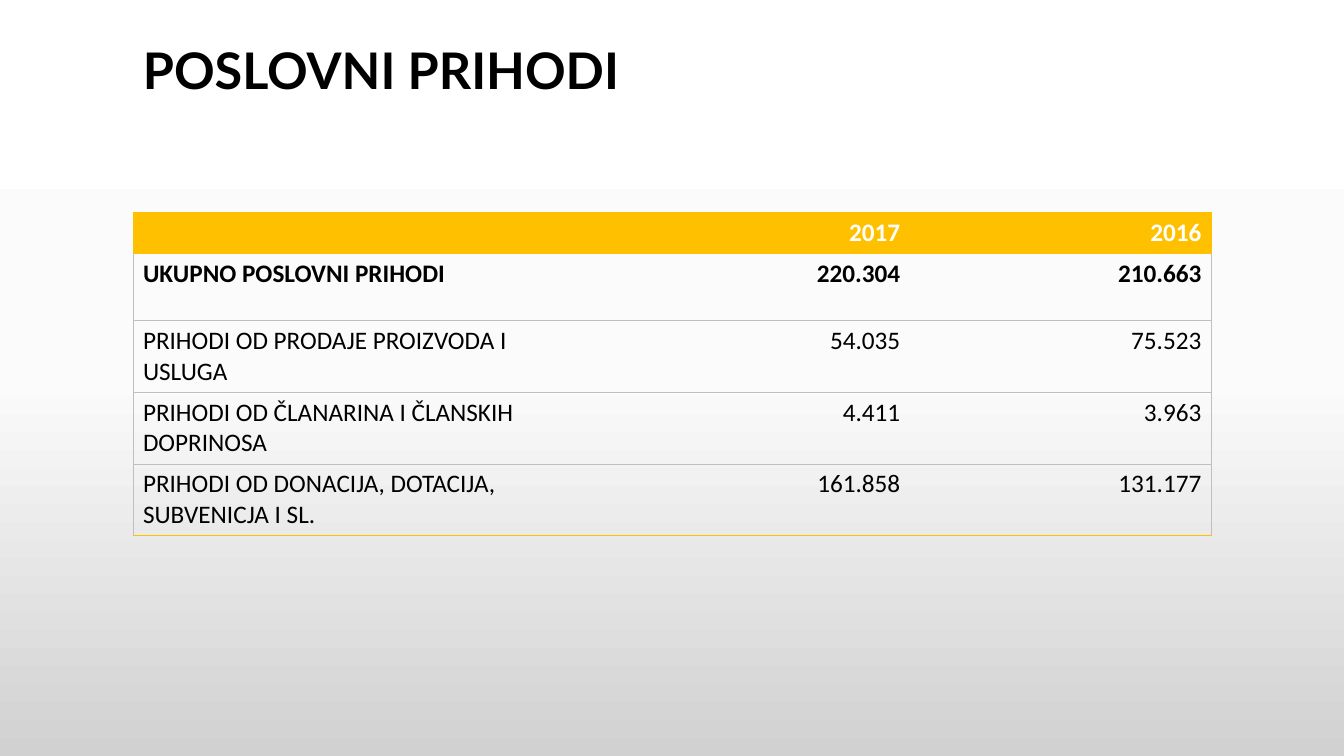
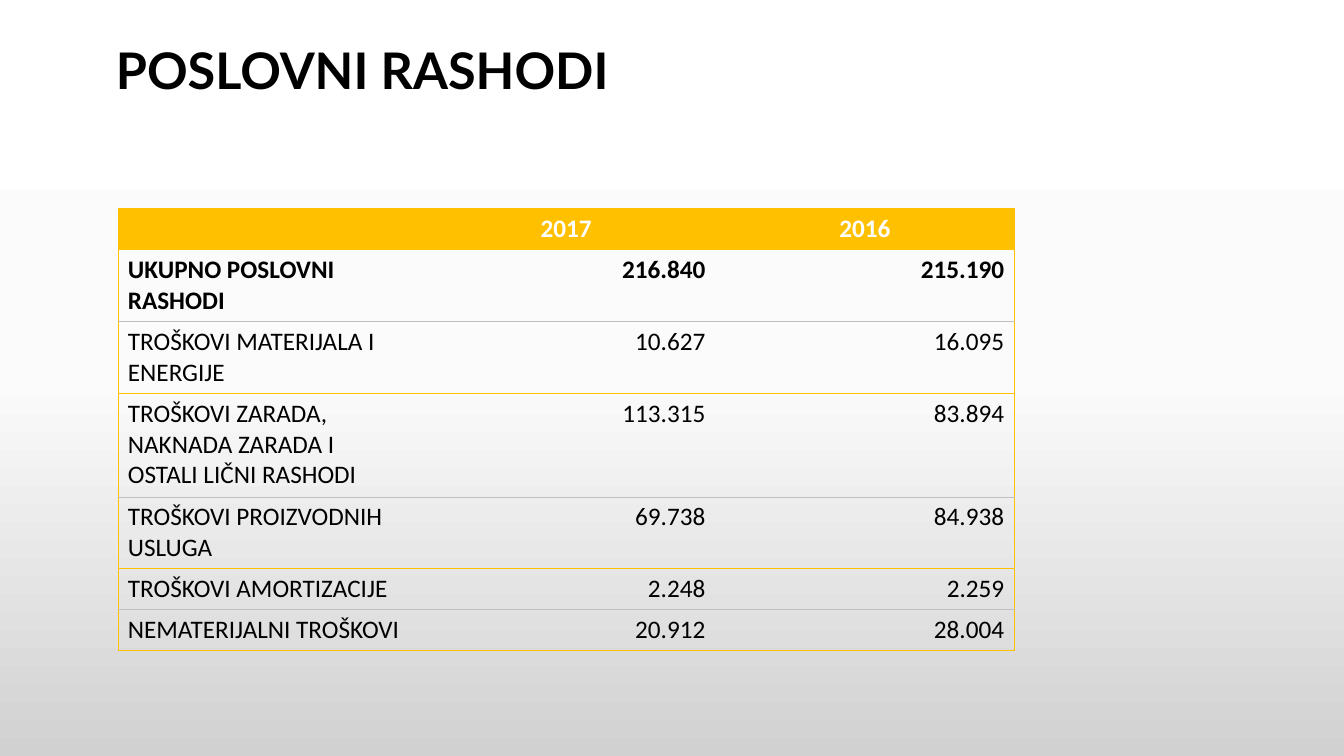
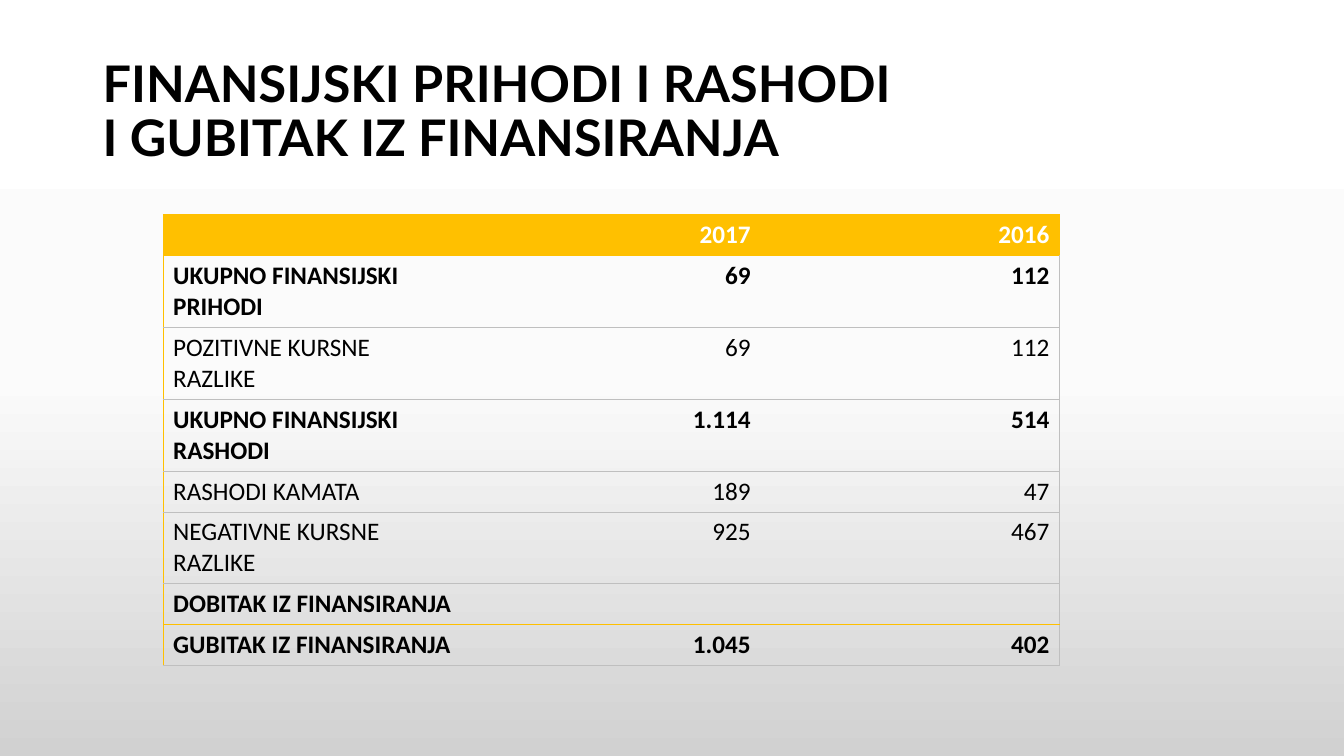
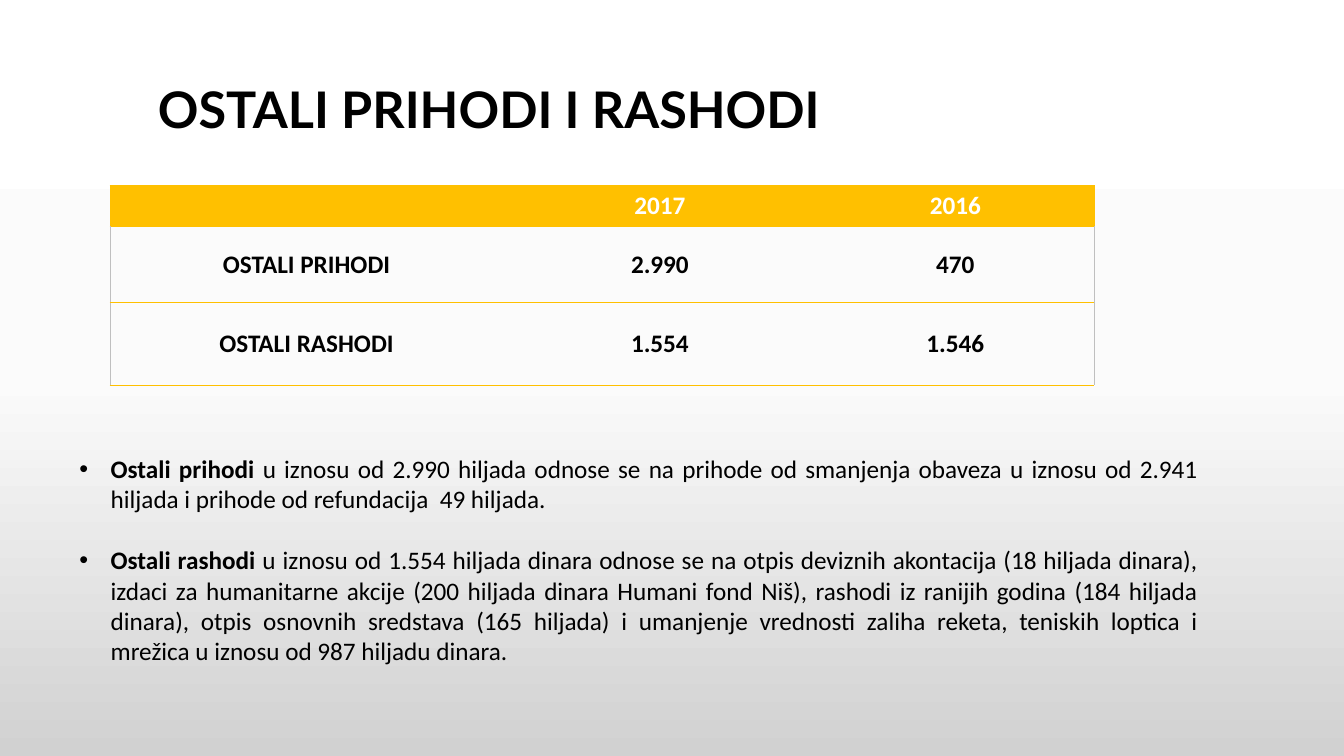
from copy import deepcopy
from dataclasses import dataclass

from pptx import Presentation
from pptx.dml.color import RGBColor
from pptx.enum.text import MSO_ANCHOR, PP_ALIGN
from pptx.oxml import parse_xml
from pptx.oxml.ns import nsdecls, qn
from pptx.util import Cm, Pt

LEFT, CENTER, RIGHT = PP_ALIGN.LEFT, PP_ALIGN.CENTER, PP_ALIGN.RIGHT
JUSTIFY = PP_ALIGN.JUSTIFY
TOP, MIDDLE = MSO_ANCHOR.TOP, MSO_ANCHOR.MIDDLE

BLACK = RGBColor(0x00, 0x00, 0x00)
WHITE = RGBColor(0xFF, 0xFF, 0xFF)
AMBER = RGBColor(0xFF, 0xC0, 0x00)
GRAY = RGBColor(0xBF, 0xBF, 0xBF)
BACKGROUND = [
    (0, WHITE),
    (0.5, RGBColor(0xFB, 0xFB, 0xFB)),
    (1, RGBColor(0xD1, 0xD1, 0xD1)),
]

TITLE_FONT, BODY_FONT = "Lato", "Calibri"
TITLE_SIZE, BODY_SIZE = Pt(36), Pt(18)
BORDER_WIDTH = Pt(0.5)
TITLE_WIDTH, TITLE_HEIGHT = 29.21, 3.68
ONE_LINE, TWO_LINES, THREE_LINES = 1.03, 1.81, 2.61
PLAIN_STYLE = "{2D5ABB26-0587-4C30-8999-92F81FD0307C}"
YEARS = ("", "2017", "2016")


@dataclass
class Row:
    """One table row: its texts, height in cm and the colour of its lower edge."""
    texts: tuple
    height: float = ONE_LINE
    bold: bool = False
    edge: RGBColor = GRAY


@dataclass
class TableStyle:
    left_edge: RGBColor = GRAY
    right_edge: RGBColor = GRAY
    header_align: PP_ALIGN = RIGHT
    label_align: PP_ALIGN = LEFT
    value_align: PP_ALIGN = RIGHT
    anchor: MSO_ANCHOR = TOP


def set_background(master):
    fill = master.background.fill
    fill.gradient()
    fill.gradient_angle = 270
    gs_lst = master.element.find(".//" + qn("a:gsLst"))
    gs_lst.insert(1, deepcopy(gs_lst[0]))
    for stop, (position, color) in zip(fill.gradient_stops, BACKGROUND):
        stop.position = position
        stop.color.rgb = color


def add_run(p, text, font=BODY_FONT, size=BODY_SIZE, color=BLACK, bold=False):
    r = p.add_run()
    r.text = text
    r.font.name, r.font.size, r.font.bold = font, size, bold
    r.font.color.rgb = color


def add_title(slide, left, top, *lines):
    sp = slide.shapes.add_textbox(Cm(left), Cm(top), Cm(TITLE_WIDTH), Cm(TITLE_HEIGHT))
    tf = sp.text_frame
    tf.word_wrap = True
    tf.vertical_anchor = MIDDLE
    p = tf.paragraphs[0]
    p.line_spacing = 0.9
    for i, line in enumerate(lines):
        if i:
            p.add_line_break()
        add_run(p, line, TITLE_FONT, TITLE_SIZE, bold=True)


def add_border(cell, side, color):
    """Draw one side (L, R, T or B) of a cell; call in that order."""
    cell._tc.get_or_add_tcPr().append(parse_xml(
        f'<a:ln{side} {nsdecls("a")} w="{int(BORDER_WIDTH)}"><a:solidFill>'
        f'<a:srgbClr val="{color}"/></a:solidFill></a:ln{side}>'))


def fill_cell(cell, text, align, anchor, color, bold):
    cell.vertical_anchor = anchor
    p = cell.text_frame.paragraphs[0]
    p.alignment = align
    if text:
        add_run(p, text, color=color, bold=bold)


def add_year_table(slide, left, top, widths, rows, style):
    rows = [Row(YEARS, bold=True, edge=AMBER)] + rows
    frame = slide.shapes.add_table(
        len(rows), len(widths), Cm(left), Cm(top),
        Cm(sum(widths)), Cm(sum(row.height for row in rows)))
    table = frame.table
    table._tbl.tblPr.find(qn("a:tableStyleId")).text = PLAIN_STYLE
    table.horz_banding = False
    for column, width in zip(table.columns, widths):
        column.width = Cm(width)
    last = len(widths) - 1
    for i, row in enumerate(rows):
        header = i == 0
        table.rows[i].height = Cm(row.height)
        for j, text in enumerate(row.texts):
            cell = table.cell(i, j)
            if j == 0:
                add_border(cell, "L", AMBER if header else style.left_edge)
            if j == last:
                add_border(cell, "R", AMBER if header else style.right_edge)
            if header:
                add_border(cell, "T", AMBER)
            add_border(cell, "B", row.edge)
            if header:
                cell.fill.solid()
                cell.fill.fore_color.rgb = AMBER
                fill_cell(cell, text, style.header_align, TOP, WHITE, True)
            else:
                cell.fill.background()
                align = style.value_align if j else style.label_align
                fill_cell(cell, text, align, style.anchor, BLACK, row.bold)


def add_bullets(slide, left, top, width, height, items):
    """Add justified bullets, each a bold lead followed by plain text."""
    sp = slide.shapes.add_textbox(Cm(left), Cm(top), Cm(width), Cm(height))
    tf = sp.text_frame
    tf.word_wrap = True
    indent = int(Cm(0.79))
    for i, (lead, text) in enumerate(items):
        p = tf.add_paragraph() if i else tf.paragraphs[0]
        p.alignment = JUSTIFY
        if i:
            p.space_before = Pt(22)
        pPr = p._p.get_or_add_pPr()
        pPr.set("marL", str(indent))
        pPr.set("indent", str(-indent))
        pPr.append(parse_xml(f'<a:buFont {nsdecls("a")} typeface="Arial"/>'))
        pPr.append(parse_xml(f'<a:buChar {nsdecls("a")} char="•"/>'))
        add_run(p, lead, bold=True)
        add_run(p, text)


def income_slide(slide):
    add_title(slide, 3.35, 0, "POSLOVNI PRIHODI")
    add_year_table(slide, 3.35, 5.36, (11.33, 8.26, 7.59), [
        Row(("UKUPNO POSLOVNI PRIHODI", "220.304", "210.663"), 1.68, True),
        Row(("PRIHODI OD PRODAJE PROIZVODA I USLUGA", "54.035", "75.523"), TWO_LINES),
        Row(("PRIHODI OD ČLANARINA I ČLANSKIH DOPRINOSA", "4.411", "3.963"), TWO_LINES),
        Row(("PRIHODI OD DONACIJA, DOTACIJA, SUBVENICJA I SL.", "161.858", "131.177"),
            TWO_LINES, edge=AMBER),
    ], TableStyle())


def expenses_slide(slide):
    add_title(slide, 2.67, 0, "POSLOVNI RASHODI")
    add_year_table(slide, 2.97, 5.26, (7.53,) * 3, [
        Row(("UKUPNO POSLOVNI RASHODI", "216.840", "215.190"), TWO_LINES, True),
        Row(("TROŠKOVI MATERIJALA I ENERGIJE", "10.627", "16.095"), TWO_LINES, edge=AMBER),
        Row(("TROŠKOVI ZARADA, NAKNADA ZARADA I OSTALI LIČNI RASHODI", "113.315", "83.894"),
            THREE_LINES),
        Row(("TROŠKOVI PROIZVODNIH USLUGA", "69.738", "84.938"), TWO_LINES, edge=AMBER),
        Row(("TROŠKOVI AMORTIZACIJE", "2.248", "2.259")),
        Row(("NEMATERIJALNI TROŠKOVI", "20.912", "28.004"), edge=AMBER),
    ], TableStyle(left_edge=AMBER, right_edge=AMBER, header_align=CENTER))


def financing_slide(slide):
    add_title(slide, 2.34, 1.02, "FINANSIJSKI PRIHODI I RASHODI", "I GUBITAK IZ FINANSIRANJA")
    add_year_table(slide, 4.11, 5.41, (7.53,) * 3, [
        Row(("UKUPNO FINANSIJSKI PRIHODI", "69", "112"), TWO_LINES, True),
        Row(("POZITIVNE KURSNE RAZLIKE", "69", "112"), TWO_LINES),
        Row(("UKUPNO FINANSIJSKI RASHODI", "1.114", "514"), TWO_LINES, True),
        Row(("RASHODI KAMATA", "189", "47")),
        Row(("NEGATIVNE KURSNE RAZLIKE", "925", "467"), TWO_LINES),
        Row(("DOBITAK IZ FINANSIRANJA", "", ""), bold=True, edge=AMBER),
        Row(("GUBITAK IZ FINANSIRANJA", "1.045", "402"), bold=True),
    ], TableStyle(left_edge=AMBER))


def other_slide(slide):
    add_title(slide, 3.73, 0.99, "OSTALI PRIHODI I RASHODI")
    add_year_table(slide, 2.77, 4.67, (9.91, 7.9, 6.99), [
        Row(("OSTALI PRIHODI", "2.990", "470"), 1.93, True, AMBER),
        Row(("OSTALI RASHODI", "1.554", "1.546"), 2.07, True, AMBER),
    ], TableStyle(header_align=CENTER, label_align=CENTER, value_align=CENTER, anchor=MIDDLE))
    add_bullets(slide, 1.75, 11.3, 28.7, 5.64, [
        ("Ostali prihodi ",
         "u iznosu od 2.990 hiljada odnose se na prihode od smanjenja obaveza "
         "u iznosu od 2.941 hiljada i prihode od refundacija  49 hiljada."),
        ("Ostali rashodi ",
         "u iznosu od 1.554 hiljada dinara odnose se na otpis deviznih akontacija "
         "(18 hiljada dinara), izdaci za humanitarne akcije (200 hiljada dinara "
         "Humani fond Niš), rashodi iz ranijih godina (184 hiljada dinara), otpis "
         "osnovnih sredstava (165 hiljada) i umanjenje vrednosti zaliha reketa, "
         "teniskih loptica i mrežica u iznosu od 987 hiljadu dinara."),
    ])


def main():
    prs = Presentation()
    prs.slide_width, prs.slide_height = Cm(33.87), Cm(19.05)
    set_background(prs.slide_master)
    for build in (income_slide, expenses_slide, financing_slide, other_slide):
        build(prs.slides.add_slide(prs.slide_layouts[6]))
    prs.save("out.pptx")


if __name__ == "__main__":
    main()
